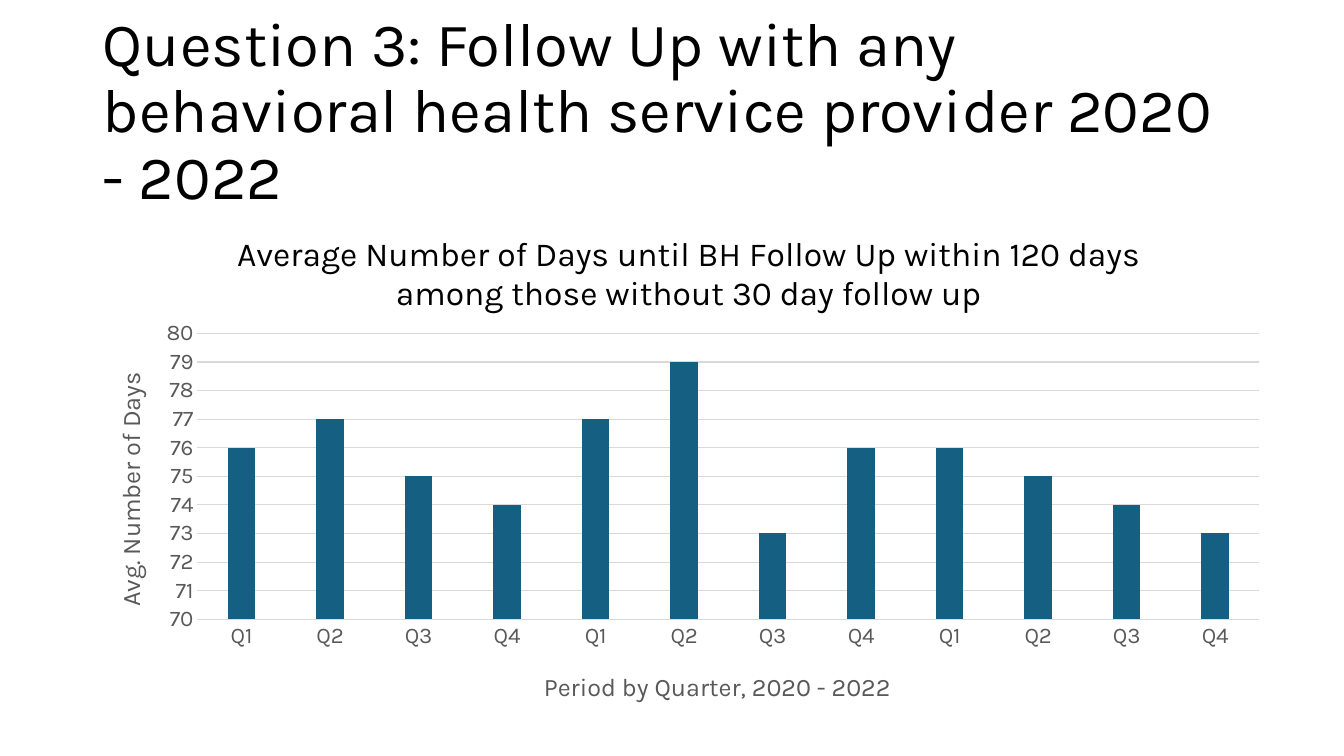
"""Build a slide with a column chart of average days until follow up."""
from dataclasses import dataclass

from lxml.etree import SubElement
from pptx import Presentation
from pptx.chart.axis import _BaseAxis
from pptx.chart.data import CategoryChartData
from pptx.dml.color import RGBColor
from pptx.enum.chart import XL_CHART_TYPE, XL_TICK_MARK
from pptx.enum.dml import MSO_LINE
from pptx.enum.text import MSO_ANCHOR, MSO_AUTO_SIZE, PP_ALIGN
from pptx.oxml.ns import qn
from pptx.text.text import TextFrame
from pptx.util import Inches, Pt

FONT = "Karla"
BLACK = RGBColor(0x00, 0x00, 0x00)
GRAY = RGBColor(0x59, 0x59, 0x59)
LIGHT = RGBColor(0xD9, 0xD9, 0xD9)
TEAL = RGBColor(0x15, 0x60, 0x82)
WIDTH, HEIGHT = Inches(13.33), Inches(7.5)

QUARTERS = ["Q1", "Q2", "Q3", "Q4"] * 3
DAYS = [76, 77, 75, 74, 77, 79, 73, 76, 76, 75, 74, 73]


@dataclass
class Box:
    """Shares of the slide's size."""

    x: float
    y: float
    w: float
    h: float

    def emu(self) -> tuple[int, int, int, int]:
        """Return left, top, width and height as lengths."""
        return (int(self.x * WIDTH), int(self.y * HEIGHT),
                int(self.w * WIDTH), int(self.h * HEIGHT))


@dataclass
class Caption:
    """A chart or axis title, placed by shares of the chart's size."""

    text: str
    size: int
    color: RGBColor
    x: float
    y: float


TITLE_BOX = Box(0.069, 0.053, 0.863, 0.193)
CHART_BOX = Box(0.059, 0.261, 0.896, 0.685)
HEADING = Caption("Average Number of Days until BH Follow Up within 120 days "
                  "among those without 30 day follow up", 24, BLACK, 0.126, 0.055)
PERIOD = Caption("Period by Quarter, 2020 - 2022", 18, GRAY, 0.382, 0.905)
AVERAGE = Caption("Avg. Number of Days", 18, GRAY, 0.025, 0.329)


def add_run(tf: TextFrame, text: str, size: int, color: RGBColor) -> None:
    """Add a formatted run to the first paragraph."""
    r = tf.paragraphs[0].add_run()
    r.text = text
    r.font.name = FONT
    r.font.size = Pt(size)
    r.font.bold = False
    r.font.color.rgb = color


def set_layout(parent, index: int, **shares: float) -> None:
    """Give a chart part a manual layout."""
    for old in parent.findall(qn("c:layout")):
        parent.remove(old)
    layout = SubElement(parent, qn("c:layout"))
    parent.insert(index, layout)
    manual = SubElement(layout, qn("c:manualLayout"))
    if "w" in shares:
        SubElement(manual, qn("c:layoutTarget")).set("val", "inner")
    for key in ("x", "y"):
        SubElement(manual, qn(f"c:{key}Mode")).set("val", "edge")
    for key, share in shares.items():
        SubElement(manual, qn(f"c:{key}")).set("val", str(share))


def add_caption(title, cap: Caption) -> None:
    """Write and place a chart or axis title."""
    add_run(title.text_frame, cap.text, cap.size, cap.color)
    set_layout(title._element, 1, x=cap.x, y=cap.y)


def style_axis(axis: _BaseAxis, cap: Caption) -> None:
    """Format an axis and its title."""
    axis.major_tick_mark = XL_TICK_MARK.NONE
    axis.minor_tick_mark = XL_TICK_MARK.NONE
    font = axis.tick_labels.font
    font.name, font.size, font.color.rgb = FONT, Pt(16), GRAY
    add_caption(axis.axis_title, cap)


def style_line(line) -> None:
    """Draw a thin light line."""
    line.dash_style = MSO_LINE.SOLID
    line.color.rgb = LIGHT
    line.width = Pt(0.75)


def add_days_chart(s) -> None:
    """Add the column chart."""
    data = CategoryChartData()
    data.categories = QUARTERS
    data.add_series("Series 1", DAYS)
    chart = s.shapes.add_chart(XL_CHART_TYPE.COLUMN_CLUSTERED,
                               *CHART_BOX.emu(), data).chart
    chart.font.name, chart.font.size, chart.font.color.rgb = FONT, Pt(10), BLACK
    chart.has_legend = False
    chart.has_title = True
    add_caption(chart.chart_title, HEADING)
    style_axis(chart.category_axis, PERIOD)
    style_line(chart.category_axis.format.line)
    axis = chart.value_axis
    style_axis(axis, AVERAGE)
    axis.minimum_scale, axis.maximum_scale, axis.major_unit = 70, 80, 1
    axis.format.line.fill.background()
    style_line(axis.major_gridlines.format.line)
    plot = chart.plots[0]
    plot.gap_width, plot.overlap, plot.vary_by_categories = 219, -27, False
    fill = plot.series[0].format.fill
    fill.solid()
    fill.fore_color.rgb = TEAL
    area = chart._chartSpace.find(".//" + qn("c:plotArea"))
    set_layout(area, 0, x=0.098, y=0.263, w=0.882, h=0.552)


def add_title(s) -> None:
    """Fill and place the title placeholder."""
    sp = s.shapes.title
    sp.left, sp.top, sp.width, sp.height = TITLE_BOX.emu()
    tf = sp.text_frame
    tf.word_wrap = True
    tf.auto_size = MSO_AUTO_SIZE.NONE
    tf.vertical_anchor = MSO_ANCHOR.MIDDLE
    p = tf.paragraphs[0]
    p.alignment = PP_ALIGN.LEFT
    p.line_spacing = 0.9
    add_run(tf, "Question 3: Follow Up with any behavioral health service "
                "provider 2020 - 2022", 44, BLACK)


def main() -> None:
    """Build and save the slide."""
    prs = Presentation()
    prs.slide_width, prs.slide_height = WIDTH, HEIGHT
    s = prs.slides.add_slide(prs.slide_layouts[5])
    add_title(s)
    add_days_chart(s)
    prs.save("out.pptx")


if __name__ == "__main__":
    main()
